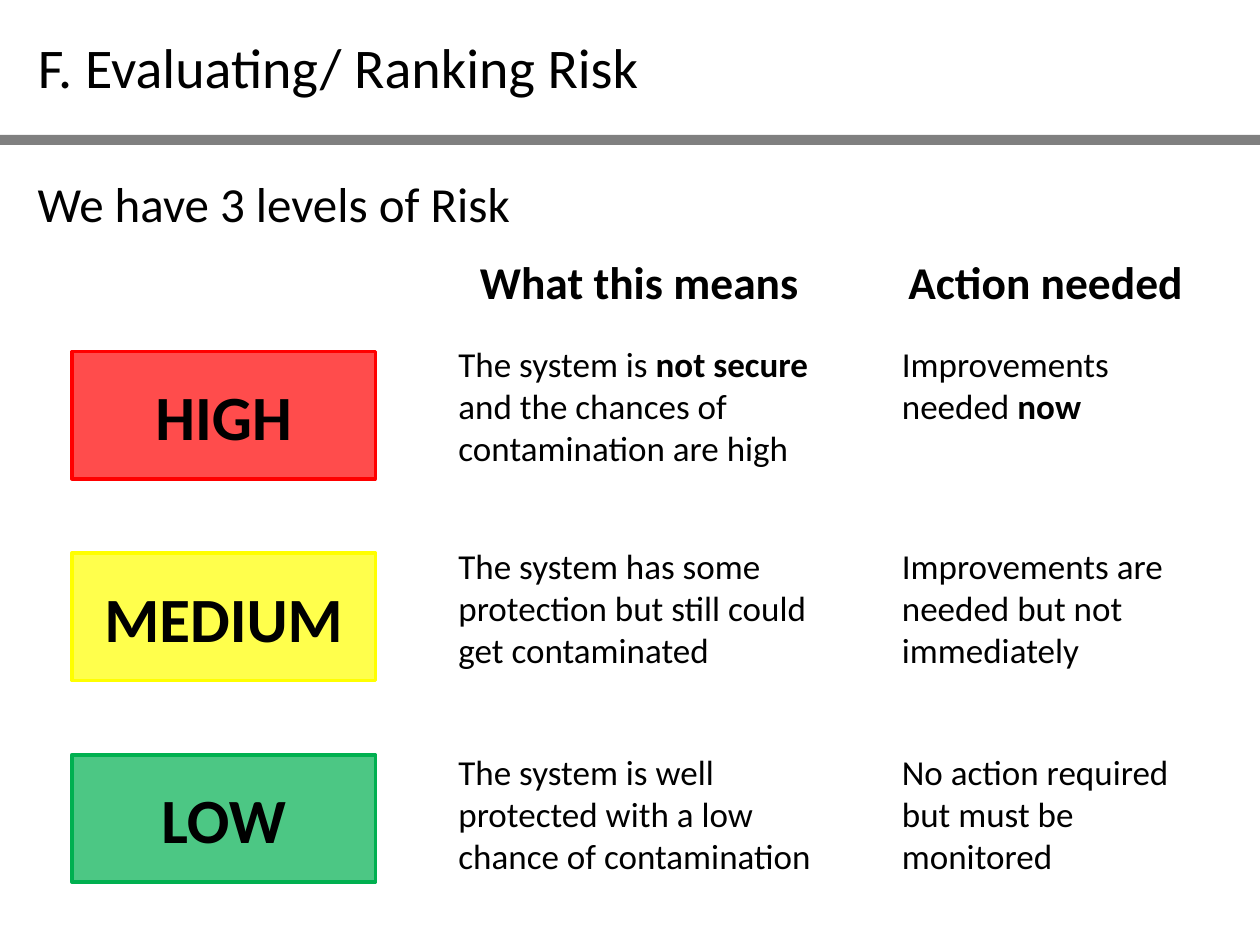
import dataclasses

import lxml.etree
import pptx
import pptx.dml.color
import pptx.enum.shapes
import pptx.enum.text
import pptx.oxml.ns
import pptx.util

Inches = pptx.util.Inches
Align = pptx.enum.text.PP_ALIGN
Anchor = pptx.enum.text.MSO_ANCHOR
AutoSize = pptx.enum.text.MSO_AUTO_SIZE
RECTANGLE = pptx.enum.shapes.MSO_SHAPE.RECTANGLE


@dataclasses.dataclass(frozen=True)
class Theme:
    font: str = "Calibri"
    ink: str = "000000"
    rule: str = "808080"
    high: str = "FF0000"
    medium: str = "FFFF00"
    low: str = "00B050"
    level_opacity: int = 70
    title_size: int = 32
    lead_size: int = 28
    heading_size: int = 26
    level_size: int = 36
    body_size: int = 20


THEME = Theme()

# Column boxes as (left, width)
LEVEL_COLUMN = (0.57, 2.41)
MEANING_COLUMN = (3.54, 3.27)
ACTION_COLUMN = (7.06, 2.73)
FIRST_ROW, ROW_STEP, LEVEL_HEIGHT = 2.79, 1.6, 1.01

HEADINGS = [
    ("What this means", (3.46, 1.97, 3.23, 0.54)),
    ("Action needed", (6.81, 1.97, 2.98, 0.54)),
]

# Level, colour, top of its texts, meaning and action; spans are (text, bold)
LEVELS = [
    ("HIGH", THEME.high, 2.67,
     [("The system is ", False), ("not secure", True),
      (" and the chances of contamination are high", False)],
     [("Improvements needed ", False), ("now", True)]),
    ("MEDIUM", THEME.medium, 4.27,
     [("The system has some protection but still could get contaminated", False)],
     [("Improvements are needed but not immediately", False)]),
    ("LOW", THEME.low, 5.91,
     [("The system is well protected with a low chance of contamination", False)],
     [("No action required but must be monitored", False)]),
]


def rgb(value):
    return pptx.dml.color.RGBColor.from_string(value)


def set_all(target, values):
    for name, value in values.items():
        setattr(target, name, value)


def place(shape, box):
    names = ("left", "top", "width", "height")
    set_all(shape, {name: Inches(length) for name, length in zip(names, box)})


def write(shape, spans, size, align=Align.LEFT, anchor=Anchor.TOP,
          auto_size=AutoSize.SHAPE_TO_FIT_TEXT):
    frame = shape.text_frame
    set_all(frame, {"word_wrap": True, "auto_size": auto_size,
                    "vertical_anchor": anchor})
    para = frame.paragraphs[0]
    para.alignment = align
    for text, bold in spans:
        span = para.add_run()
        span.text = text
        set_all(span.font, {"name": THEME.font, "size": pptx.util.Pt(size),
                            "bold": bold})
        span.font.color.rgb = rgb(THEME.ink)


def add_text(page, box, spans, size, align=Align.LEFT):
    shape = page.shapes.add_textbox(*map(Inches, box))
    write(shape, spans, size, align)


def add_rectangle(page, box, colour):
    shape = page.shapes.add_shape(RECTANGLE, *map(Inches, box))
    shape.shadow.inherit = False
    shape.fill.solid()
    shape.fill.fore_color.rgb = rgb(colour)
    return shape


def set_opacity(shape, percent):
    qn = pptx.oxml.ns.qn
    colour = shape.fill._xPr.find(qn("a:solidFill")).find(qn("a:srgbClr"))
    lxml.etree.SubElement(colour, qn("a:alpha")).set("val", str(percent * 1000))


def add_header(page, title_box, rule_box):
    # Rule below the title
    rule = add_rectangle(page, rule_box, THEME.rule)
    rule.line.fill.background()

    # Title
    title = page.shapes.title
    place(title, title_box)
    write(title, [("F. Evaluating/ Ranking Risk", False)], THEME.title_size)


def add_headings(page, lead_box):
    add_text(page, lead_box, [("We have 3 levels of Risk", False)],
             THEME.lead_size)
    for text, box in HEADINGS:
        add_text(page, box, [(text, True)], THEME.heading_size, Align.CENTER)


def add_level(page, box, level):
    name, colour, text_top, meaning, action = level

    # Tinted level box
    shape = add_rectangle(page, box, colour)
    set_opacity(shape, THEME.level_opacity)
    shape.line.color.rgb = rgb(colour)
    shape.line.width = pptx.util.Pt(2)
    write(shape, [(name, True)], THEME.level_size, Align.CENTER,
          Anchor.MIDDLE, AutoSize.NONE)

    # Meaning and action beside it
    for (left, width), spans in ((MEANING_COLUMN, meaning),
                                 (ACTION_COLUMN, action)):
        add_text(page, (left, text_top, width, 1.11), spans, THEME.body_size)


def main():
    deck = pptx.Presentation()
    set_all(deck, {"slide_width": Inches(10), "slide_height": Inches(7.5)})
    page = deck.slides.add_slide(deck.slide_layouts.get_by_name("Title Only"))

    add_header(page, (0.2, 0.21, 8.58, 0.64), (0, 1.07, 10, 0.08))
    add_headings(page, (0.2, 1.33, 7.38, 0.57))
    left, width = LEVEL_COLUMN
    for row, level in enumerate(LEVELS):
        top = FIRST_ROW + row * ROW_STEP
        add_level(page, (left, top, width, LEVEL_HEIGHT), level)

    deck.save("out.pptx")


if __name__ == "__main__":
    main()
